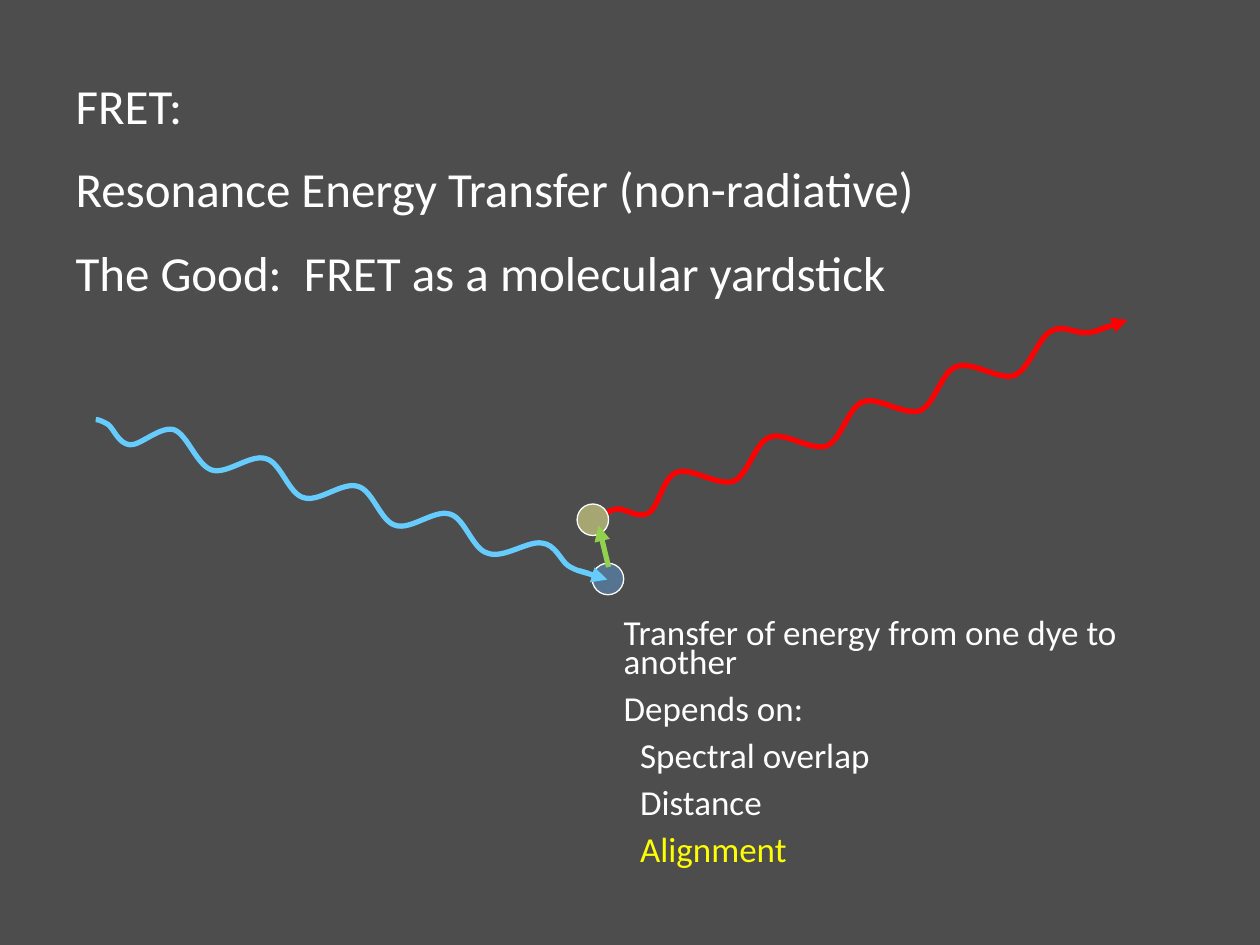
from pptx import Presentation
from pptx.dml.color import RGBColor
from pptx.enum.shapes import MSO_CONNECTOR, MSO_SHAPE
from pptx.enum.text import MSO_ANCHOR, MSO_AUTO_SIZE, PP_ALIGN
from pptx.oxml.ns import qn
from pptx.util import Inches, Pt
from lxml.etree import SubElement

GREY = RGBColor(0x4D, 0x4D, 0x4D)
WHITE = RGBColor(0xFF, 0xFF, 0xFF)
YELLOW = RGBColor(0xFF, 0xFF, 0x00)
SKY = RGBColor(0x66, 0xCC, 0xFF)
RED = RGBColor(0xFF, 0x00, 0x00)
GREEN = RGBColor(0x92, 0xD0, 0x50)
DONOR_BLUE = RGBColor(0x5B, 0x9B, 0xD5)
ACCEPTOR_YELLOW = RGBColor(0xFF, 0xFF, 0x99)

HEADING = [
    ("FRET:", 0, WHITE),
    ("Resonance Energy Transfer (non-radiative)", 0, WHITE),
    ("The Good:  FRET as a molecular yardstick", 0, WHITE),
]
FACTORS = [
    ("Transfer of energy from one dye to another", 0, WHITE),
    ("Depends on:", 0, WHITE),
    ("Spectral overlap", 1, WHITE),
    ("Distance", 1, WHITE),
    ("Alignment", 1, YELLOW),
]
EXCITATION = {
    "color": SKY,
    "lead": [(0.76, 3.33), (0.78, 3.33), (0.81, 3.34), (0.86, 3.37),
             (0.9, 3.4), (0.94, 3.52), (1.03, 3.53), (1.11, 3.54), (1.27, 3.38),
             (1.38, 3.41), (1.49, 3.45), (1.56, 3.69), (1.68, 3.73)],
    "cycle": [(0.12, 0.04), (0.31, -0.13), (0.43, -0.09),
              (0.55, -0.06), (0.61, 0.19), (0.73, 0.22)],
    "trail": [(3.99, 4.44), (4.19, 4.29), (4.3, 4.31), (4.41, 4.32), (4.45, 4.45),
              (4.51, 4.49), (4.57, 4.53), (4.63, 4.54), (4.67, 4.55)],
    "arrow": ((4.6, 4.53), (4.82, 4.6)),
}
EMISSION = {
    "color": RED,
    "lead": [(4.81, 4.07), (4.82, 4.07), (4.85, 4.04), (4.91, 4.04), (4.97, 4.04),
             (5.07, 4.12), (5.15, 4.07), (5.23, 4.02), (5.26, 3.79), (5.37, 3.75)],
    "cycle": [(0.11, -0.05), (0.32, 0.11), (0.45, 0.07),
              (0.57, 0.02), (0.62, -0.24), (0.74, -0.28)],
    "trail": [(7.72, 2.86), (7.92, 3.02), (8.05, 2.98), (8.17, 2.93), (8.24, 2.68),
              (8.34, 2.63), (8.43, 2.57), (8.54, 2.65), (8.62, 2.64), (8.7, 2.64),
              (8.76, 2.6), (8.79, 2.59)],
    "arrow": ((8.72, 2.62), (8.95, 2.54)),
}
TRANSFER = ((4.83, 4.5), (4.75, 4.17))
CYCLES = 3
DYE_SIZE = 0.25
INDENT = 0.13


def write_lines(holder, box, lines, size, spacing):
    for side, length in zip(("left", "top", "width", "height"), box):
        setattr(holder, side, Inches(length))
    frame = holder.text_frame
    frame.text = "\n".join(text for text, level, color in lines)
    frame_format = {"word_wrap": True, "vertical_anchor": MSO_ANCHOR.MIDDLE,
                    "auto_size": MSO_AUTO_SIZE.SHAPE_TO_FIT_TEXT}
    for key, value in frame_format.items():
        setattr(frame, key, value)
    line_format = {"alignment": PP_ALIGN.LEFT, "line_spacing": spacing,
                   "space_before": Pt(size / 2), "space_after": Pt(0)}
    for paragraph, (text, level, color) in zip(frame.paragraphs, lines):
        for key, value in line_format.items():
            setattr(paragraph, key, value)
        font = paragraph.runs[0].font
        font.name, font.size, font.color.rgb = "Calibri", Pt(size), color
        properties = paragraph._p.get_or_add_pPr()
        properties.set("marL", str(Inches(INDENT * level)))
        properties.set("indent", "0")
        SubElement(properties, qn("a:buNone"))


def add_dye(shapes, left, top, color):
    dye = shapes.add_shape(MSO_SHAPE.OVAL, Inches(left), Inches(top),
                           Inches(DYE_SIZE), Inches(DYE_SIZE))
    dye.shadow.inherit = False
    dye.fill.solid()
    dye.fill.fore_color.rgb = color
    tint = dye._element.spPr.find(qn("a:solidFill")).find(qn("a:srgbClr"))
    SubElement(tint, qn("a:alpha"), val="50000")
    dye.line.color.rgb = WHITE
    dye.line.width = Pt(0.75)


def add_arrow(shapes, ends, color):
    start, end = ends
    arrow = shapes.add_connector(MSO_CONNECTOR.STRAIGHT, *map(Inches, start + end))
    arrow.line.color.rgb = color
    arrow.line.width = Pt(3)
    SubElement(arrow.line._get_or_add_ln(), qn("a:tailEnd"), type="triangle")
    SubElement(arrow._element.spPr, qn("a:effectLst"))


def add_wave(shapes, wave):
    points = list(wave["lead"])
    for _ in range(CYCLES):
        x, y = points[-1]
        points += [(x + dx, y + dy) for dx, dy in wave["cycle"]]
    points += wave["trail"]
    start, *knots = [(Inches(x), Inches(y)) for x, y in points]
    builder = shapes.build_freeform(*start)
    builder.add_line_segments(knots, close=False)
    curve = builder.convert_to_shape()
    outline = next(curve._element.iter(qn("a:moveTo"))).getparent()
    steps = outline.findall(qn("a:lnTo"))
    for first in range(0, len(steps), 3):
        bezier = SubElement(outline, qn("a:cubicBezTo"))
        for step in steps[first:first + 3]:
            bezier.append(step[0])
            outline.remove(step)
    curve.shadow.inherit = False
    curve.fill.background()
    curve.line.color.rgb = wave["color"]
    curve.line.width = Pt(3)
    add_arrow(shapes, wave["arrow"], wave["color"])


def main():
    deck = Presentation()
    deck.slide_width, deck.slide_height = Inches(10), Inches(7.5)
    slide = deck.slides.add_slide(deck.slide_layouts[1])
    slide.background.fill.solid()
    slide.background.fill.fore_color.rgb = GREY
    shapes = slide.shapes
    write_lines(shapes.title, (0.5, 0.5, 8.25, 1.99), HEADING, 28, 1.0)
    write_lines(slide.placeholders[1], (4.85, 4.82, 4.74, 2.19), FACTORS, 20, 0.7)
    add_dye(shapes, 4.7, 4.47, DONOR_BLUE)
    add_wave(shapes, EXCITATION)
    add_wave(shapes, EMISSION)
    add_dye(shapes, 4.58, 4, ACCEPTOR_YELLOW)
    add_arrow(shapes, TRANSFER, GREEN)
    deck.save("out.pptx")


if __name__ == "__main__":
    main()
